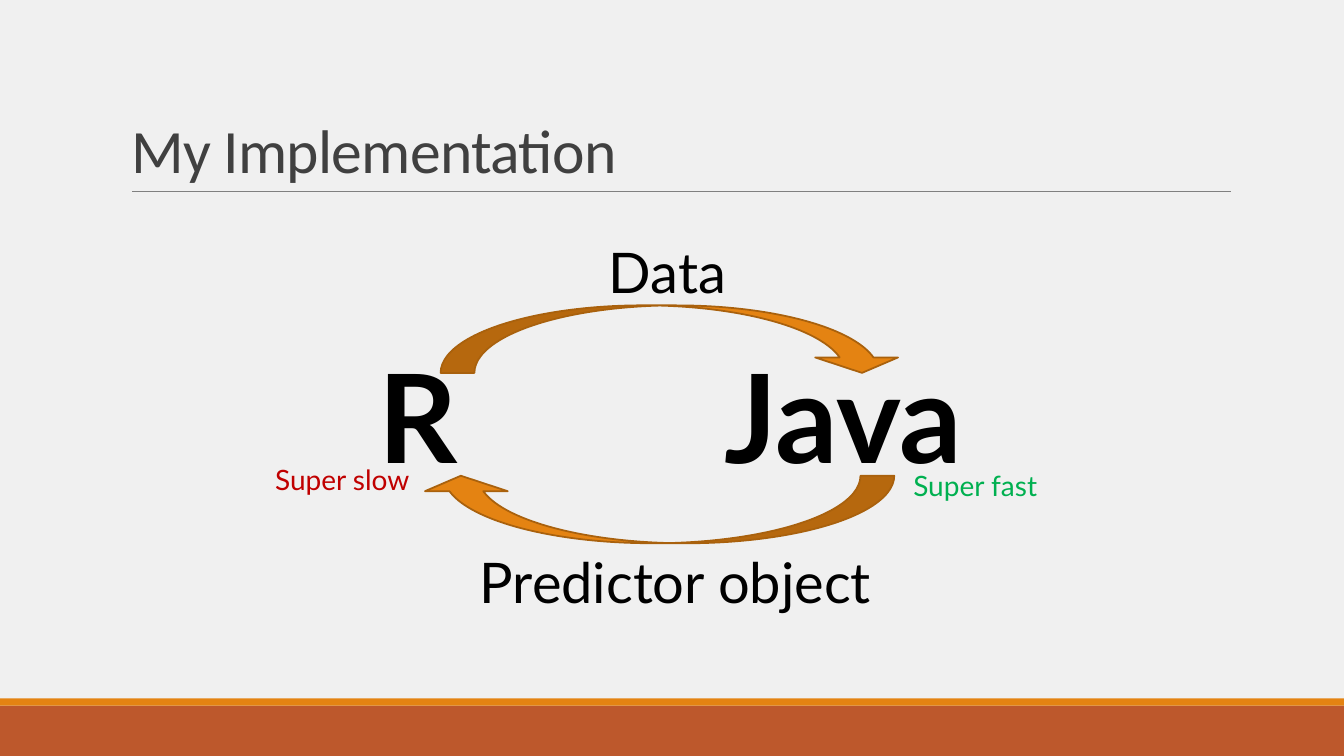
from lxml import etree
from pptx import Presentation
from pptx.dml.color import RGBColor
from pptx.enum.shapes import MSO_CONNECTOR, MSO_SHAPE
from pptx.enum.text import MSO_ANCHOR, MSO_AUTO_SIZE, PP_ALIGN
from pptx.oxml.ns import qn
from pptx.util import Inches, Pt

RECTANGLE = MSO_SHAPE.RECTANGLE
CURVED_ARROW = MSO_SHAPE.CURVED_UP_ARROW
STRAIGHT = MSO_CONNECTOR.STRAIGHT
BOTTOM = MSO_ANCHOR.BOTTOM
NO_AUTOFIT = MSO_AUTO_SIZE.NONE
GROW = MSO_AUTO_SIZE.SHAPE_TO_FIT_TEXT
LEFT = PP_ALIGN.LEFT

TITLE_ONLY = 5
ORANGE = "E48312"
BLACK = "000000"

BARS = [
    ((0, 7, 13.33, 0.5), "BD582C"),
    ((0, 6.93, 13.33, 0.07), ORANGE),
]
ARROWS = [
    ((4.16, 4.72, 4.71, 0.67), "flipH"),
    ((4.37, 3.03, 4.59, 0.67), "flipV"),
]
LABELS = [
    ("R", (3.66, 3.33, 1.06, 1.58), 88, BLACK, True),
    ("Java", (7.09, 3.33, 4.21, 1.58), 88, BLACK, True),
    ("Data", (5.94, 2.31, 1.46, 0.77), 40, BLACK, False),
    ("Predictor object", (4.66, 5.38, 4.08, 0.77), 40, BLACK, False),
    ("Super fast", (8.96, 4.6, 4.08, 0.44), 20, "00B050", False),
    ("Super slow", (2.63, 4.54, 1.75, 0.44), 20, "C00000", False),
]


def color(code):
    return RGBColor.from_string(code)


def inches(values):
    return [Inches(value) for value in values]


def apply(target, formats):
    for name, value in formats.items():
        setattr(target, name, value)


def format_font(font, name, size, code, bold=False):
    apply(font, {"name": name, "size": Pt(size), "bold": bold})
    font.color.rgb = color(code)


def add_filled(page, kind, place, code):
    shape = page.shapes.add_shape(kind, *inches(place))
    shape.shadow.inherit = False
    shape.fill.solid()
    shape.fill.fore_color.rgb = color(code)
    shape.line.fill.background()
    return shape


def add_arrow(page, place, flip):
    arrow = add_filled(page, CURVED_ARROW, place, ORANGE)
    arrow.line.color.rgb = color("A9610D")
    arrow.line.width = Pt(1.25)
    for index, value in enumerate((0.5, 1.226, 0.229)):
        arrow.adjustments[index] = value
    arrow.element.spPr.find(qn("a:xfrm")).set(flip, "1")


def add_rule(page, ends):
    rule = page.shapes.add_connector(STRAIGHT, *inches(ends))
    rule.line.color.rgb = color("808080")
    rule.line.width = Pt(0.5)
    etree.SubElement(rule.element.spPr, qn("a:effectLst"))


def add_label(page, text, place, size, code, bold):
    frame = page.shapes.add_textbox(*inches(place)).text_frame
    apply(frame, {"word_wrap": True, "auto_size": GROW})
    span = frame.paragraphs[0].add_run()
    span.text = text
    format_font(span.font, "Lato", size, code, bold)


def set_title(page, text, place):
    title = page.shapes.title
    apply(title, dict(zip(("left", "top", "width", "height"), inches(place))))
    frame = title.text_frame
    apply(frame, {"word_wrap": True, "auto_size": NO_AUTOFIT,
                  "vertical_anchor": BOTTOM})
    para = frame.paragraphs[0]
    apply(para, {"alignment": LEFT, "line_spacing": 0.85})
    span = para.add_run()
    span.text = text
    format_font(span.font, "Calibri", 44, "404040")
    span.font._element.set("spc", "-50")


def main():
    deck = Presentation()
    apply(deck, {"slide_width": Inches(13.33), "slide_height": Inches(7.5)})
    page = deck.slides.add_slide(deck.slide_layouts[TITLE_ONLY])
    page.background.fill.solid()
    page.background.fill.fore_color.rgb = color("F0F0F0")
    for place, code in BARS:
        add_filled(page, RECTANGLE, place, code)
    add_rule(page, (1.31, 1.9, 12.21, 1.9))
    set_title(page, "My Implementation", (1.2, 0.31, 11, 1.59))
    for place, flip in ARROWS:
        add_arrow(page, place, flip)
    for label in LABELS:
        add_label(page, *label)
    deck.save("out.pptx")


if __name__ == "__main__":
    main()
